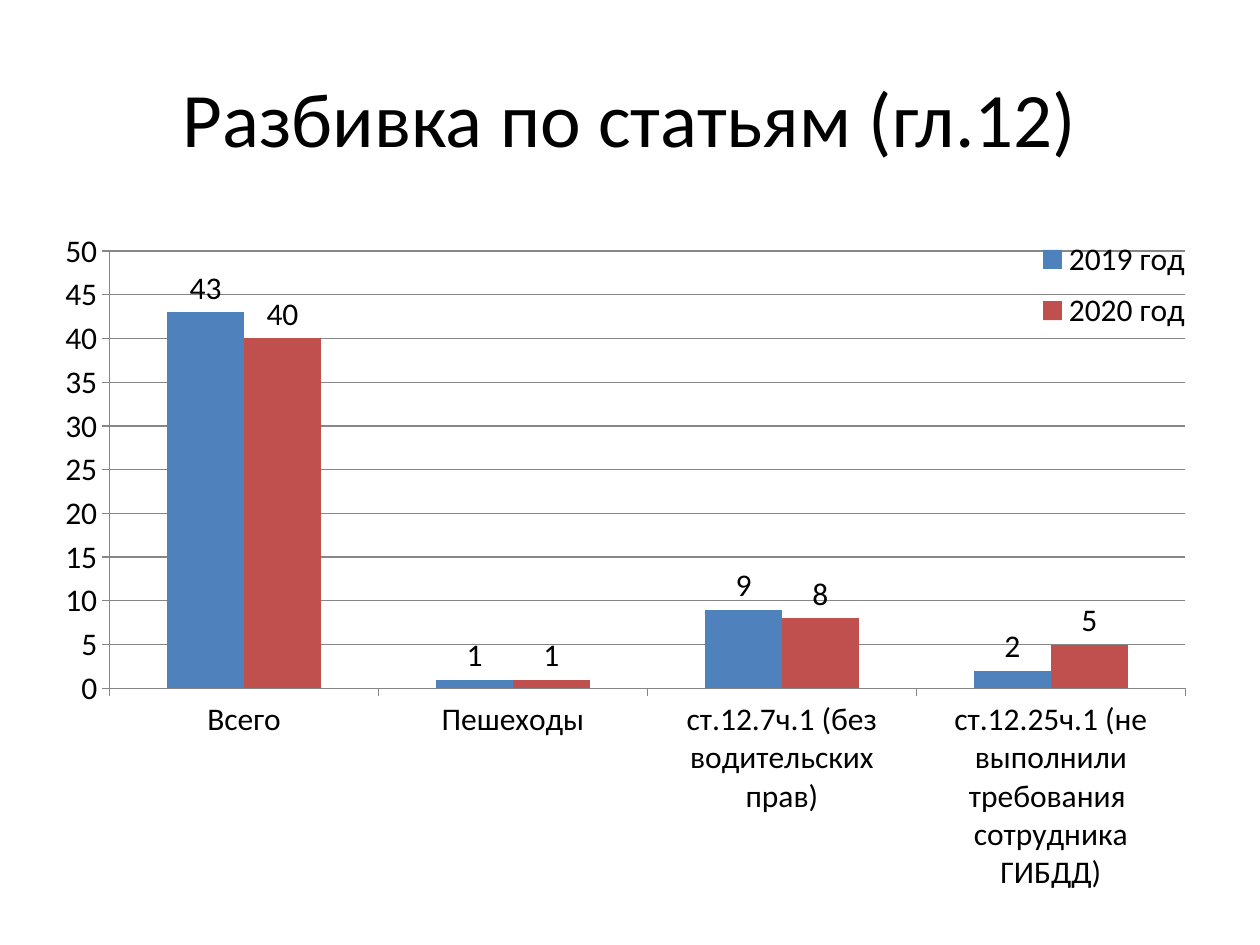
from lxml import etree
from pptx import Presentation
from pptx.chart.data import CategoryChartData
from pptx.enum import chart as ch, text
from pptx.oxml import ns
from pptx.util import Pt

TITLE = "Разбивка по статьям (гл.12)"
CATEGORIES = [
    "Всего",
    "Пешеходы",
    "ст.12.7ч.1 (без водительских прав)",
    "ст.12.25ч.1 (не выполнили требования  сотрудника ГИБДД)",
]
SERIES = [
    ("2019 год", (43, 1, 9, 2), "blue"),
    ("2020 год", (40, 1, 8, 5), "red"),
]
COLORS = {"text": "000000", "line": "868686", "blue": "4F81BD", "red": "C0504D"}
FONT = "Calibri"
# Left, top, width, height as shares of the chart area
PLOT_BOX = (0.064, 0.045, 0.926, 0.644)
LEGEND_BOX = (0.86, 0.01, 0.14, 0.17)


def color(name):
    return RGBColor.from_string(COLORS[name])


def style_font(font, size):
    font.name = FONT
    font.size = Pt(size)
    font.color.rgb = color("text")


def style_line(line):
    line.color.rgb = color("line")
    line.width = Pt(0.75)


def manual_layout(box, inner=False):
    layout = etree.Element(ns.qn("c:layout"))
    manual = etree.SubElement(layout, ns.qn("c:manualLayout"))
    settings = [("layoutTarget", "inner")] if inner else []
    settings += [("xMode", "edge"), ("yMode", "edge")]
    settings += zip("xywh", map(str, box))
    for tag, value in settings:
        etree.SubElement(manual, ns.qn(f"c:{tag}"), val=value)
    return layout


def add_title(slide):
    tf = slide.shapes.add_textbox(Pt(36), Pt(21.6), Pt(648), Pt(90)).text_frame
    tf.word_wrap = True
    tf.vertical_anchor = text.MSO_ANCHOR.MIDDLE
    p = tf.paragraphs[0]
    p.text = TITLE
    p.alignment = text.PP_ALIGN.CENTER
    style_font(p.runs[0].font, 44)


def add_column_chart(slide):
    data = CategoryChartData()
    data.categories = CATEGORIES
    for name, values, _ in SERIES:
        data.add_series(name, values)
    chart = slide.shapes.add_chart(
        ch.XL_CHART_TYPE.COLUMN_CLUSTERED,
        Pt(20.16), Pt(126), Pt(663.84), Pt(388.08), data).chart
    style_font(chart.font, 18)
    chart.has_title = False

    plot = chart.plots[0]
    plot.gap_width = 150
    plot.overlap = 0
    plot.vary_by_categories = False
    for series, (_, _, fill) in zip(plot.series, SERIES):
        series.format.fill.solid()
        series.format.fill.fore_color.rgb = color(fill)
        labels = series.data_labels
        labels.show_value = True
        labels.position = ch.XL_LABEL_POSITION.OUTSIDE_END

    for axis in (chart.category_axis, chart.value_axis):
        axis.major_tick_mark = ch.XL_TICK_MARK.OUTSIDE
        axis.minor_tick_mark = ch.XL_TICK_MARK.NONE
        style_line(axis.format.line)
    values = chart.value_axis
    values.minimum_scale, values.maximum_scale, values.major_unit = 0, 50, 5
    values.has_major_gridlines = True
    style_line(values.major_gridlines.format.line)

    chart.has_legend = True
    legend = chart.legend
    legend.position = ch.XL_LEGEND_POSITION.RIGHT
    legend.include_in_layout = False
    root = chart.element
    area = root.find(".//" + ns.qn("c:plotArea"))
    position = root.find(".//" + ns.qn("c:legendPos"))
    for old in area.findall(ns.qn("c:layout")) + position.getparent().findall(ns.qn("c:layout")):
        old.getparent().remove(old)
    area.insert(0, manual_layout(PLOT_BOX, inner=True))
    position.addnext(manual_layout(LEGEND_BOX))


from pptx.dml.color import RGBColor

prs = Presentation()
prs.slide_width, prs.slide_height = Pt(720), Pt(540)
s = prs.slides.add_slide(prs.slide_layouts[6])
add_title(s)
add_column_chart(s)
prs.save("out.pptx")
